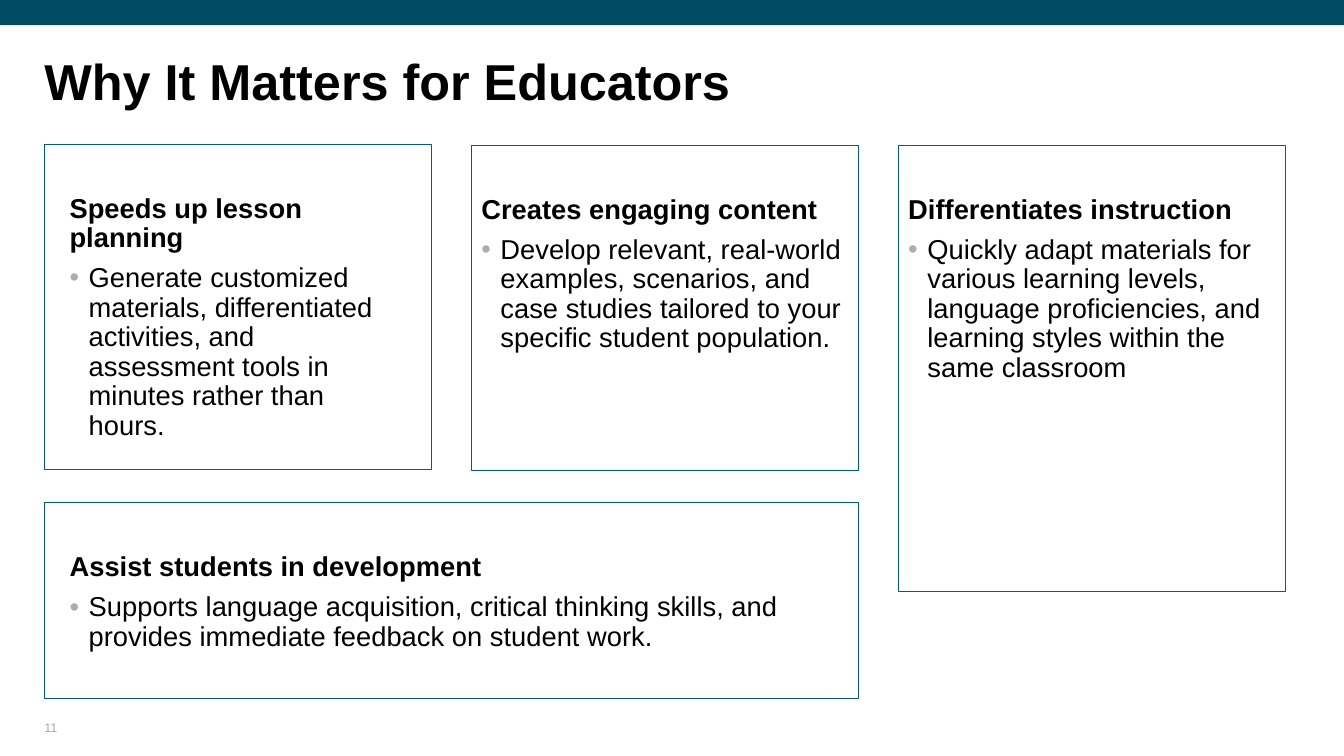
from lxml.etree import SubElement
from pptx import Presentation
from pptx.dml.color import RGBColor
from pptx.enum.shapes import MSO_SHAPE as Shape
from pptx.enum.text import MSO_ANCHOR as Anchor, PP_ALIGN as Align
from pptx.oxml.ns import qn
from pptx.util import Inches, Pt

COLORS = {"band": "014B64", "border": "005F7B", "text": "000000", "muted": "AEABAB"}
FONT = "Arial"
MARGIN = 0.44
CARD_WIDTH, COLUMN_STEP = 3.84, 4.235
WIDE_CARD = COLUMN_STEP + CARD_WIDTH
MIDDLE, RIGHT = MARGIN + COLUMN_STEP, MARGIN + 2 * COLUMN_STEP

# Box (left, top, width, height), side inset, heading, detail
CARDS = [
    ((MARGIN, 1.43, CARD_WIDTH, 3.23), 0.25, "Speeds up lesson planning",
     "Generate customized materials, differentiated activities, and "
     "assessment tools in minutes rather than hours."),
    ((MIDDLE, 1.44, CARD_WIDTH, 3.23), 0.1, "Creates engaging content",
     "Develop relevant, real-world examples, scenarios, and case studies "
     "tailored to your specific student population."),
    ((RIGHT, 1.44, CARD_WIDTH, 4.43), 0.1, "Differentiates instruction",
     "Quickly adapt materials for various learning levels, language "
     "proficiencies, and learning styles within the same classroom"),
    ((MARGIN, 4.99, WIDE_CARD, 1.94), 0.25, "Assist students in development",
     "Supports language acquisition, critical thinking skills, and provides "
     "immediate feedback on student work."),
]


def color(name):
    return RGBColor.from_string(COLORS[name])


def set_frame(frame, insets, anchor=Anchor.TOP):
    """Wrap the text and set the left, top, right and bottom insets."""
    frame.word_wrap = True
    frame.vertical_anchor = anchor
    (frame.margin_left, frame.margin_top,
     frame.margin_right, frame.margin_bottom) = map(Inches, insets)


def write(para, text, size, tint="text", bold=False, spacing=0.9):
    para.text = text
    para.alignment = Align.LEFT
    para.line_spacing = spacing
    for span in para.runs:
        span.font.name = FONT
        span.font.size = Pt(size)
        span.font.bold = bold
        span.font.color.rgb = color(tint)


def add_bullet(para, indent=0.19):
    props = para._p.get_or_add_pPr()
    props.set("marL", str(Inches(indent)))
    props.set("indent", str(-Inches(indent)))
    tint = SubElement(props, qn("a:buClr"))
    SubElement(tint, qn("a:srgbClr"), val=COLORS["muted"])
    SubElement(props, qn("a:buFont"), typeface=FONT)
    SubElement(props, qn("a:buChar"), char="•")


def add_rectangle(page, box):
    rectangle = page.shapes.add_shape(Shape.RECTANGLE, *map(Inches, box))
    rectangle.shadow.inherit = False
    return rectangle


def add_band(page, box):
    band = add_rectangle(page, box)
    band.fill.solid()
    band.fill.fore_color.rgb = color("band")
    band.line.fill.background()


def add_label(page, box, text, size, anchor=Anchor.TOP, **style):
    frame = page.shapes.add_textbox(*map(Inches, box)).text_frame
    set_frame(frame, (0, 0, 0, 0), anchor)
    write(frame.paragraphs[0], text, size, **style)


def add_card(page, box, inset, heading, detail):
    card = add_rectangle(page, box)
    card.fill.background()
    card.line.color.rgb = color("border")
    card.line.width = Pt(0.75)
    frame = card.text_frame
    set_frame(frame, (inset, 0.5, inset, 0.05))
    write(frame.paragraphs[0], heading, 19.5, bold=True)
    para = frame.add_paragraph()
    add_bullet(para)
    para.space_before = Pt(7.5)
    write(para, detail, 19.5)


def main():
    deck = Presentation()
    deck.slide_width, deck.slide_height = Inches(13.33), Inches(7.5)
    page = deck.slides.add_slide(deck.slide_layouts[6])
    add_band(page, (0, 0, 13.33, 0.25))
    add_label(page, (MARGIN, 0.57, 12.32, 1.27), "Why It Matters for Educators",
              36, bold=True)
    for card in CARDS:
        add_card(page, *card)
    add_label(page, (MARGIN, 7.05, 3, 0.24), "11", 9, Anchor.BOTTOM,
              tint="muted", spacing=1.0)
    deck.save("out.pptx")


if __name__ == "__main__":
    main()
